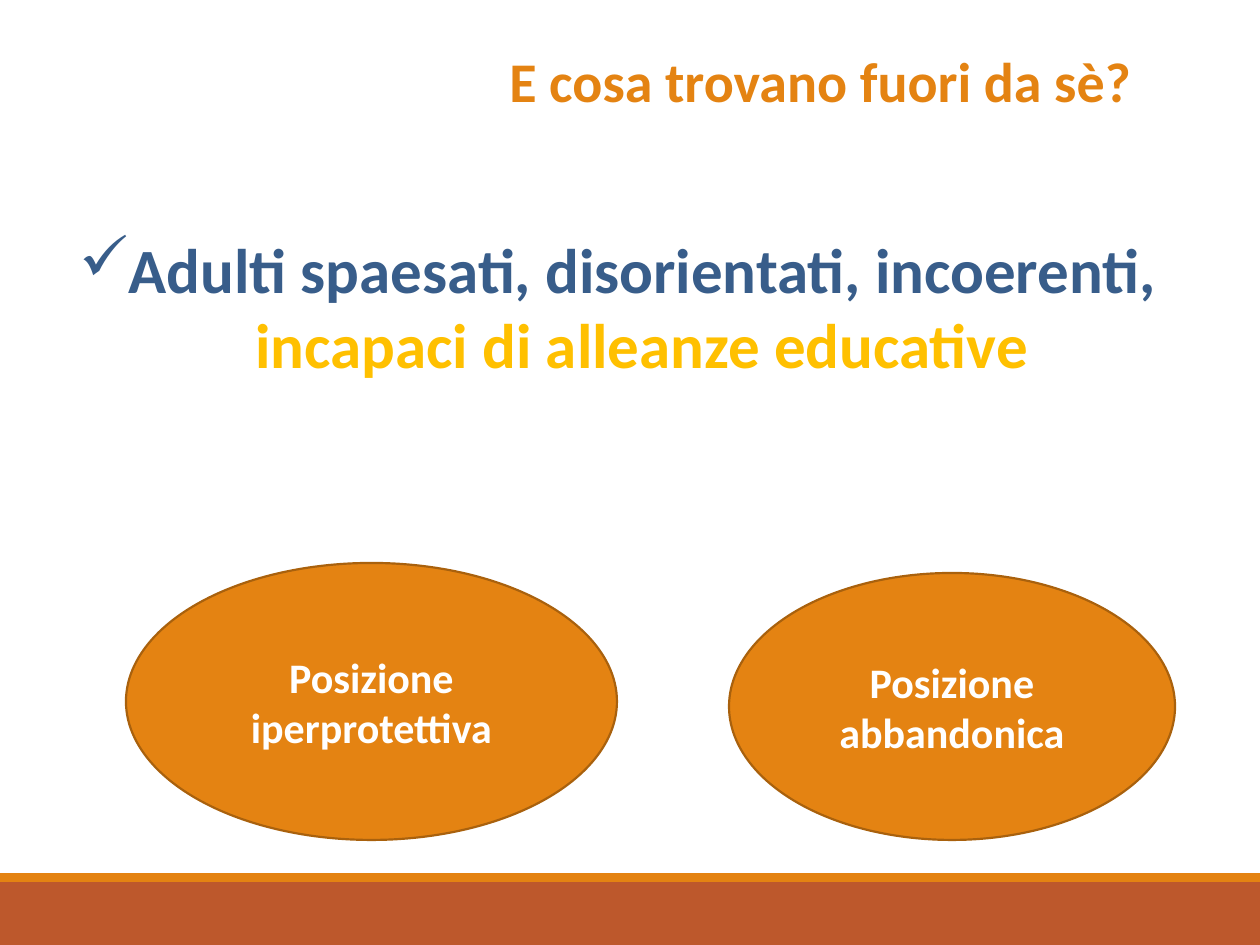
from dataclasses import dataclass

from lxml import etree
from pptx import Presentation
from pptx.dml.color import RGBColor
from pptx.enum.shapes import MSO_SHAPE
from pptx.enum.text import MSO_ANCHOR, MSO_AUTO_SIZE, PP_ALIGN
from pptx.oxml.ns import qn
from pptx.util import Emu, Inches, Pt

PX_PER_INCH = 126
TITLE_ONLY = 5
FONT = "Calibri"
RECTANGLE, OVAL = MSO_SHAPE.RECTANGLE, MSO_SHAPE.OVAL
TOP, MIDDLE = MSO_ANCHOR.TOP, MSO_ANCHOR.MIDDLE
CENTER, NO_AUTOFIT = PP_ALIGN.CENTER, MSO_AUTO_SIZE.NONE

ORANGE = RGBColor(0xE4, 0x83, 0x12)
RUST = RGBColor(0xBD, 0x58, 0x2C)
BROWN = RGBColor(0xA9, 0x61, 0x0D)
BLUE = RGBColor(0x38, 0x5D, 0x8A)
GOLD = RGBColor(0xFF, 0xC0, 0x00)
WHITE = RGBColor(0xFF, 0xFF, 0xFF)


@dataclass(frozen=True)
class Box:
    left: int
    top: int
    width: int
    height: int

    def emu(self) -> list[Emu]:
        return [px(n) for n in (self.left, self.top, self.width, self.height)]


@dataclass(frozen=True)
class Band:
    box: Box
    color: RGBColor


@dataclass(frozen=True)
class Position:
    box: Box
    text: str


BANDS = [
    Band(Box(0, 882, 1260, 63), RUST),
    Band(Box(0, 873, 1260, 9), ORANGE),
]
POSITIONS = [
    Position(Box(126, 563, 491, 277), "Posizione iperprotettiva"),
    Position(Box(729, 573, 446, 267), "Posizione abbandonica"),
]
TITLE_BOX = Box(449, 40, 743, 81)
STATEMENT_BOX = Box(44, 224, 1148, 242)
STATEMENT = [
    ("Adulti spaesati, disorientati, incoerenti, ", BLUE),
    ("incapaci di alleanze educative", GOLD),
]


def px(length: int) -> Emu:
    return Emu(round(length * Inches(1) / PX_PER_INCH))


def set_values(target, values: dict) -> None:
    for name, value in values.items():
        setattr(target, name, value)


def write_text(shape, runs: list[tuple[str, RGBColor]], size: int, anchor):
    """Write one centred bold paragraph and return it."""
    frame = shape.text_frame
    set_values(frame, {"word_wrap": True, "auto_size": NO_AUTOFIT, "vertical_anchor": anchor})
    paragraph = frame.paragraphs[0]
    set_values(paragraph, {"alignment": CENTER, "line_spacing": 1.0, "space_before": Pt(0)})
    for text, color in runs:
        run = paragraph.add_run()
        run.text = text
        set_values(run.font, {"name": FONT, "size": Pt(size), "bold": True})
        run.font.color.rgb = color
    return paragraph


def add_filled(slide, kind, box: Box, color: RGBColor):
    shape = slide.shapes.add_shape(kind, *box.emu())
    shape.shadow.inherit = False
    shape.fill.solid()
    shape.fill.fore_color.rgb = color
    shape.line.fill.background()
    return shape


def add_position(slide, position: Position) -> None:
    shape = add_filled(slide, OVAL, position.box, ORANGE)
    shape.line.color.rgb = BROWN
    shape.line.width = Pt(1.25)
    write_text(shape, [(position.text, WHITE)], 24, MIDDLE)


def add_check_bullet(paragraph, indent: int) -> None:
    properties = paragraph._p.get_or_add_pPr()
    properties.set("marL", str(px(indent)))
    properties.set("indent", str(-px(indent)))
    etree.SubElement(properties, qn("a:buChar")).set("char", "✓")


def main() -> None:
    presentation = Presentation()
    set_values(presentation, {"slide_width": px(1260), "slide_height": px(945)})
    slide = presentation.slides.add_slide(presentation.slide_layouts[TITLE_ONLY])

    # Footer bands
    for band in BANDS:
        add_filled(slide, RECTANGLE, band.box, band.color)

    # Title
    title = slide.shapes.title
    set_values(title, dict(zip(("left", "top", "width", "height"), TITLE_BOX.emu())))
    write_text(title, [("E cosa trovano fuori da sè?", ORANGE)], 32, TOP)

    # Main statement
    statement = slide.shapes.add_textbox(*STATEMENT_BOX.emu())
    add_check_bullet(write_text(statement, STATEMENT, 36, TOP), 48)

    # The two adult positions
    for position in POSITIONS:
        add_position(slide, position)

    presentation.save("out.pptx")


if __name__ == "__main__":
    main()
